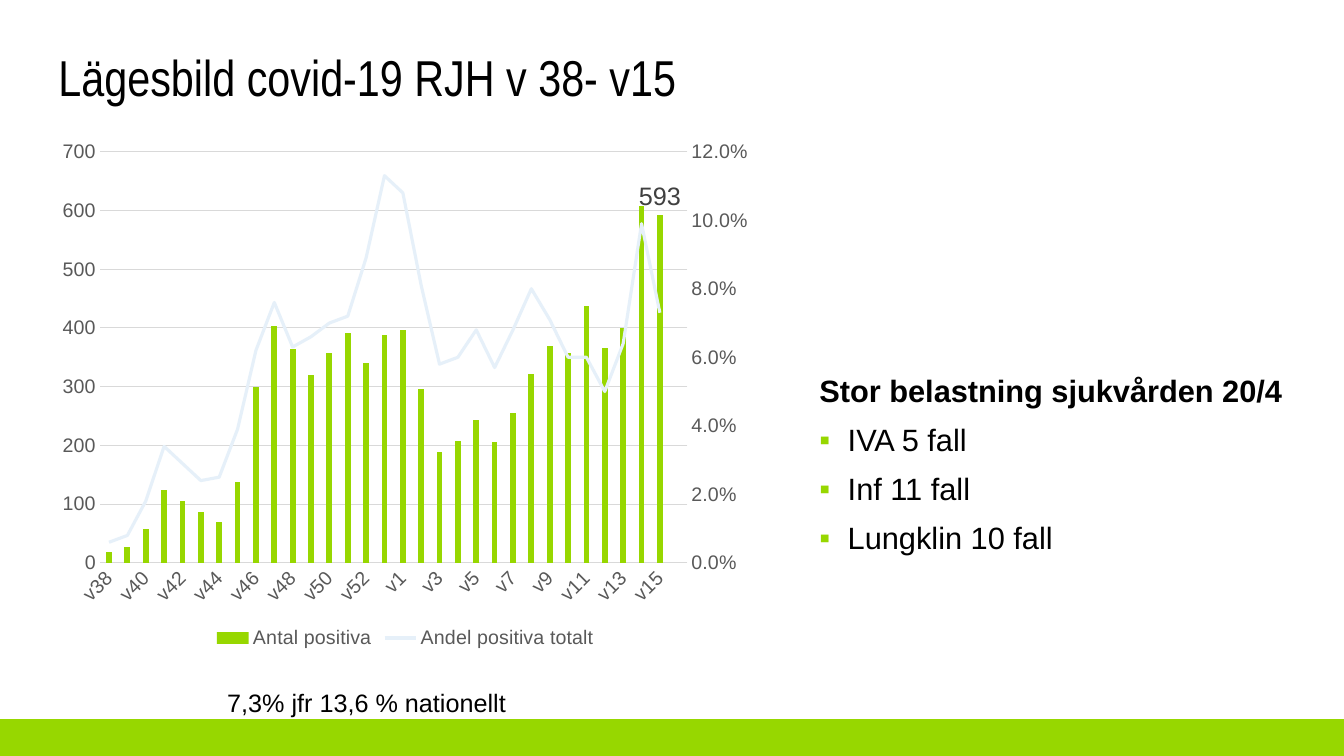
from copy import deepcopy

from lxml.etree import SubElement
from pptx import Presentation
from pptx.chart.data import CategoryChartData
from pptx.dml.color import RGBColor
from pptx.enum.chart import (XL_CHART_TYPE, XL_LABEL_POSITION, XL_LEGEND_POSITION,
                             XL_MARKER_STYLE, XL_TICK_MARK)
from pptx.enum.shapes import MSO_SHAPE
from pptx.enum.text import MSO_ANCHOR, PP_ALIGN
from pptx.oxml import parse_xml
from pptx.oxml.ns import nsdecls, qn
from pptx.util import Pt

PX = 9525  # EMU per px, 96 px to the inch
GREEN = RGBColor(0x97, 0xD7, 0x00)
PALE_BLUE = RGBColor(0xE6, 0xF0, 0xF9)
BLACK = RGBColor(0, 0, 0)
LABEL_GREY = RGBColor(0x40, 0x40, 0x40)
AXIS_GREY = RGBColor(0x59, 0x59, 0x59)
GRID_GREY = RGBColor(0xD9, 0xD9, 0xD9)

WEEKS = [f"v{week}" for week in [*range(38, 54), *range(1, 17)]]
POSITIVE_COUNTS = [18, 27, 57, 124, 106, 86, 70, 138, 300, 404, 364, 319, 357, 391, 340, 388,
                   397, 296, 188, 207, 243, 205, 255, 322, 370, 357, 437, 365, 400, 607, 593,
                   None]
POSITIVE_SHARES = [0.006, 0.008, 0.018, 0.034, 0.029, 0.024, 0.025, 0.039, 0.062, 0.076, 0.063,
                   0.066, 0.07, 0.072, 0.089, 0.113, 0.108, 0.081, 0.058, 0.06, 0.068, 0.057,
                   0.068, 0.08, 0.071, 0.06, 0.06, 0.05, 0.064, 0.099, 0.073, None]


class SlideBuilder:
    font = "Arial"
    title_font = "Arial Narrow"

    def __init__(self, slide):
        self.slide = slide

    def box(self, *lengths):
        return [length * PX for length in lengths]

    def style(self, font, size, color, name=None, bold=False):
        font.name, font.size, font.bold = name or self.font, Pt(size), bold
        font.color.rgb = color

    def band(self, *place):
        band = self.slide.shapes.add_shape(MSO_SHAPE.RECTANGLE, *self.box(*place))
        band.shadow.inherit = False
        band.fill.solid()
        band.fill.fore_color.rgb = GREEN
        band.line.fill.background()

    def title(self, text, *place):
        title = self.slide.shapes.title
        title.left, title.top, title.width, title.height = self.box(*place)
        title.text_frame.vertical_anchor = MSO_ANCHOR.MIDDLE
        line = title.text_frame.paragraphs[0]
        line.alignment = PP_ALIGN.LEFT
        line.line_spacing = 0.9
        run = line.add_run()
        run.text = text
        self.style(run.font, 36, BLACK, self.title_font)

    def text(self, lines, size, *place, spacing=1.0, before=0):
        """Each line is (text, bold, bulleted)."""
        frame = self.slide.shapes.add_textbox(*self.box(*place)).text_frame
        frame.word_wrap = True
        for index, (text, bold, bulleted) in enumerate(lines):
            line = frame.add_paragraph() if index else frame.paragraphs[0]
            line.line_spacing = spacing
            if index:
                line.space_before = Pt(before)
            if bulleted:
                self.bullet(line)
            run = line.add_run()
            run.text = text
            self.style(run.font, size, BLACK, bold=bold)

    def bullet(self, line):
        props = line._p.get_or_add_pPr()
        props.set("marL", str(27 * PX))
        props.set("indent", str(-27 * PX))
        color = SubElement(props, qn("a:buClr"))
        SubElement(color, qn("a:srgbClr")).set("val", str(GREEN))
        SubElement(props, qn("a:buFont")).set("typeface", self.font)
        SubElement(props, qn("a:buChar")).set("char", "▪")

    def chart(self, *place):
        data = CategoryChartData()
        data.categories = WEEKS
        data.add_series("Antal positiva", POSITIVE_COUNTS, "General")
        data.add_series("Andel positiva totalt", POSITIVE_SHARES, "0.0%")
        chart = self.slide.shapes.add_chart(
            XL_CHART_TYPE.COLUMN_CLUSTERED, *self.box(*place), data).chart
        self.style(chart.font, 14, BLACK)
        chart.has_title = False
        chart.has_legend = True
        chart.legend.position = XL_LEGEND_POSITION.BOTTOM
        chart.legend.include_in_layout = False
        self.style(chart.legend.font, 14, AXIS_GREY)

        # Left and bottom axes
        weeks, counts = chart.category_axis, chart.value_axis
        for axis in (weeks, counts):
            axis.major_tick_mark = axis.minor_tick_mark = XL_TICK_MARK.NONE
            self.style(axis.tick_labels.font, 14, AXIS_GREY)
        counts.minimum_scale, counts.maximum_scale, counts.major_unit = 0, 700, 100
        counts.tick_labels.number_format = "General"
        counts.tick_labels.number_format_is_linked = False
        counts.format.line.fill.background()
        counts.has_major_gridlines = True
        for line in (weeks.format.line, counts.major_gridlines.format.line):
            line.color.rgb, line.width = GRID_GREY, Pt(0.75)
        weeks._element.find(f"{qn('c:txPr')}/{qn('a:bodyPr')}").set("rot", "-2700000")

        self.share_line(chart)

        # Columns, with the latest full week labelled
        columns, shares = chart.plots
        columns.gap_width, columns.overlap = 219, -27
        columns.vary_by_categories = False
        bars = columns.series[0]
        bars.format.fill.solid()
        bars.format.fill.fore_color.rgb = GREEN
        bars.data_labels.show_value = False
        latest = bars.points[WEEKS.index("v15")].data_label
        self.style(latest.font, 18, LABEL_GREY)
        latest.position = XL_LABEL_POSITION.OUTSIDE_END

        # Share of positives
        share = shares.series[0]
        share.smooth = False
        share.marker.style = XL_MARKER_STYLE.NONE
        share.format.line.color.rgb, share.format.line.width = PALE_BLUE, Pt(2.25)

    def share_line(self, chart):
        """Move the second series to a line plot with its own right axis."""
        columns = chart.plots[0]._element
        share = columns.findall(qn("c:ser"))[1]
        self.drop(share, "c:invertIfNegative")
        lines = parse_xml(
            f'<c:lineChart {nsdecls("c")}><c:grouping val="standard"/><c:varyColors val="0"/>'
            '<c:marker val="1"/><c:axId val="5001"/><c:axId val="5002"/></c:lineChart>')
        lines.insert(2, share)
        columns.addnext(lines)

        weeks, counts = chart.category_axis._element, chart.value_axis._element
        hidden_weeks, right = deepcopy(weeks), deepcopy(counts)
        self.drop(right, "c:majorGridlines")
        counts.addnext(right)
        right.addnext(hidden_weeks)
        changes = (
            (hidden_weeks, {"axId": "5001", "crossAx": "5002", "delete": "1"}),
            (right, {"axId": "5002", "crossAx": "5001", "axPos": "r", "crosses": "max",
                     "scaling/c:max": "0.12", "majorUnit": "0.02"}),
        )
        for axis, values in changes:
            for tag, value in values.items():
                axis.xpath(f"c:{tag}")[0].set("val", value)
        right.find(qn("c:numFmt")).set("formatCode", "0.0%")

    def drop(self, parent, tag):
        for child in parent.findall(qn(tag)):
            parent.remove(child)


def main():
    deck = Presentation()
    deck.slide_width, deck.slide_height = 1280 * PX, 720 * PX
    page = SlideBuilder(deck.slides.add_slide(deck.slide_layouts[5]))

    # Footer band and heading
    page.band(0, 685, 1280, 35)
    page.title("Lägesbild covid-19 RJH v 38- v15", 46, 42, 1098, 68)

    # Hospital load
    page.text([("Stor belastning sjukvården 20/4", True, False),
               ("IVA 5 fall", False, True),
               ("Inf 11 fall", False, True),
               ("Lungklin 10 fall", False, True)],
              22, 771, 346, 489, 250, spacing=1.1, before=6)

    # Weekly cases and national comparison
    page.text([("7,3% jfr 13,6 % nationellt", False, False)], 18, 207, 650, 453, 38)
    page.chart(46, 124, 680, 498)

    deck.save("out.pptx")


if __name__ == "__main__":
    main()
